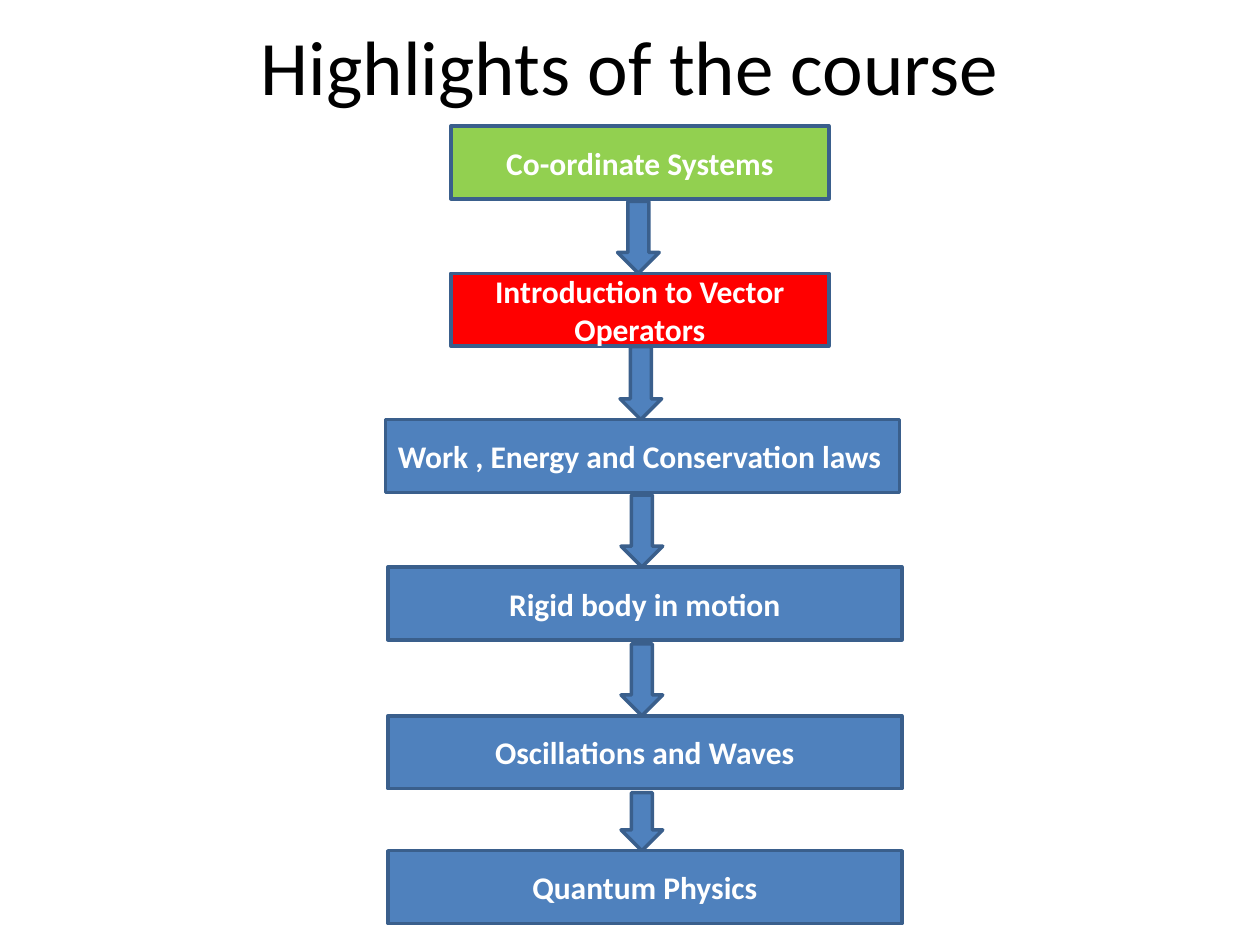
import pptx
import pptx.dml.color
import pptx.enum.shapes
import pptx.enum.text
import pptx.util

Cm, Pt = pptx.util.Cm, pptx.util.Pt
SHAPE = pptx.enum.shapes.MSO_SHAPE
ALIGN = pptx.enum.text.PP_ALIGN
MIDDLE = pptx.enum.text.MSO_ANCHOR.MIDDLE

COLORS = {
    "done": "92D050",
    "current": "FF0000",
    "ahead": "4F81BD",
    "outline": "3A5F8C",
    "title": "000000",
    "label": "FFFFFF",
}
TITLE = "Highlights of the course"
TOPICS = [
    ("Co-ordinate Systems", "done", 9.09, 2.54, 7.62, ALIGN.CENTER),
    ("Introduction to Vector Operators", "current", 9.09, 5.51, 7.62, ALIGN.CENTER),
    ("Work , Energy and Conservation laws", "ahead", 7.77, 8.46, 10.36, ALIGN.LEFT),
    ("Rigid body in motion", "ahead", 7.82, 11.43, 10.36, ALIGN.CENTER),
    ("Oscillations and Waves", "ahead", 7.82, 14.43, 10.36, ALIGN.CENTER),
    ("Quantum Physics", "ahead", 7.82, 17.15, 10.36, ALIGN.CENTER),
]
ARROWS = [(12.45, 4.06), (12.5, 6.99), (12.52, 9.98), (12.52, 12.98), (12.52, 15.98)]
TOPIC_HEIGHT = 1.47
ARROW_WIDTH = 0.84


def rgb(name):
    return pptx.dml.color.RGBColor.from_string(COLORS[name])


def write(shape, text, size, color, bold, align):
    frame = shape.text_frame
    frame.word_wrap = True
    frame.vertical_anchor = MIDDLE
    paragraph = frame.paragraphs[0]
    paragraph.text = text
    paragraph.alignment = align
    font = paragraph.font
    font.name, font.size, font.bold = "Calibri", Pt(size), bold
    font.color.rgb = rgb(color)


def add_block(slide, preset, left, top, width, height, fill):
    block = slide.shapes.add_shape(preset, Cm(left), Cm(top), Cm(width), Cm(height))
    block.shadow.inherit = False
    block.fill.solid()
    block.fill.fore_color.rgb = rgb(fill)
    block.line.color.rgb = rgb("outline")
    block.line.width = Pt(2)
    return block


def main():
    deck = pptx.Presentation()
    deck.slide_width, deck.slide_height = Cm(25.4), Cm(19.05)
    slide = deck.slides.add_slide(deck.slide_layouts[6])

    title = slide.shapes.add_textbox(Cm(1.27), Cm(0.03), Cm(22.86), Cm(2.54))
    write(title, TITLE, 44, "title", False, ALIGN.CENTER)

    for text, stage, left, top, width, align in TOPICS:
        topic = add_block(slide, SHAPE.RECTANGLE, left, top, width, TOPIC_HEIGHT, stage)
        write(topic, text, 18, "label", True, align)

    for (left, top), next_topic in zip(ARROWS, TOPICS[1:]):
        height = next_topic[3] - top
        add_block(slide, SHAPE.DOWN_ARROW, left, top, ARROW_WIDTH, height, "ahead")

    deck.save("out.pptx")


if __name__ == "__main__":
    main()
